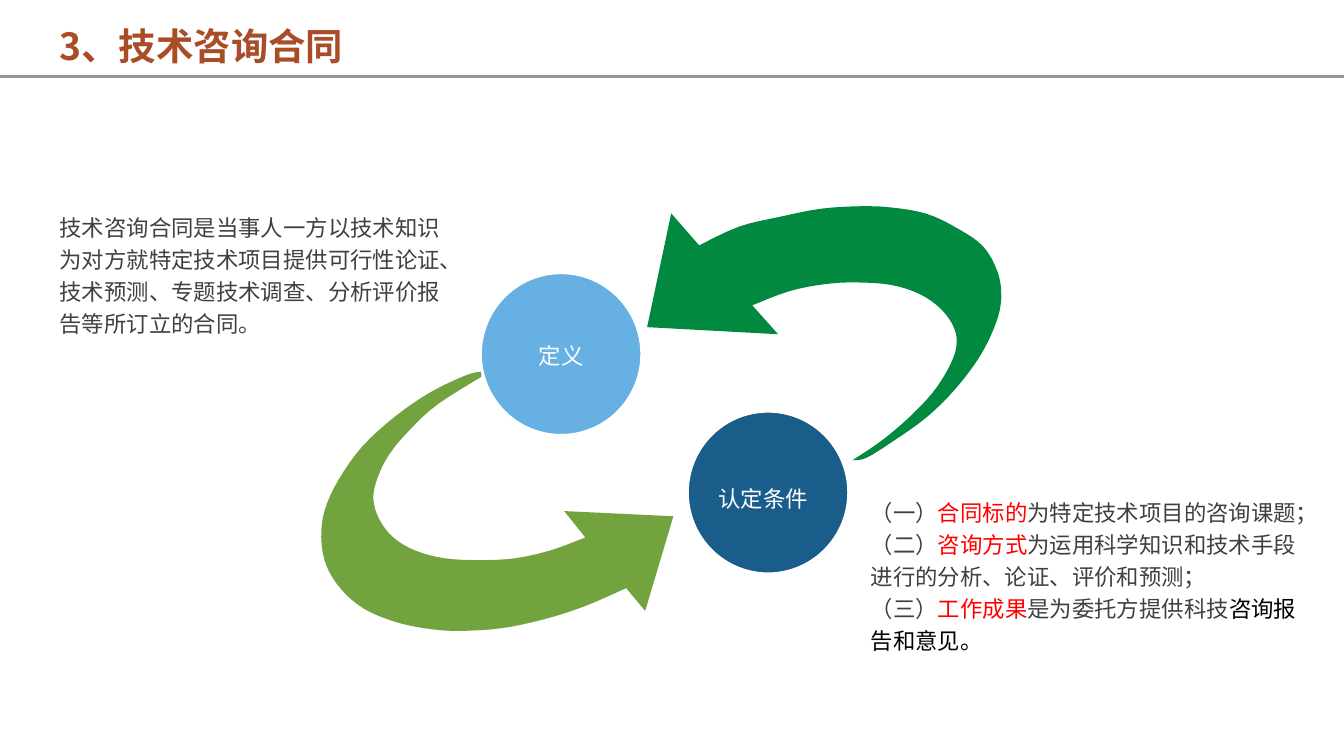
from lxml import etree
from pptx import Presentation, util as u
from pptx.dml.color import RGBColor
from pptx.enum import shapes, text
from pptx.oxml import ns

FONT = "Noto Sans CJK SC"
CELL = u.Inches(0.1)
COLS, ROWS = 100, 56.25
DARK, RED = "404040", "FF0000"

UPPER = dict(
    outer=[(58, 100), (62, 99), (70, 92), (79, 83), (87, 72), (94, 59),
           (98.5, 46), (100, 36), (99, 26), (95, 16), (88, 9), (79, 3),
           (69, 0.5), (60, 0), (49, 1), (38, 4), (26, 8), (14.7, 15.4)],
    head=[(6.8, 2.8), (0, 47.6), (37, 50.4)],
    inner=[(29.7, 39), (40, 33.5), (50, 30.7), (59, 30), (69, 31),
           (77, 34.6), (83, 40.5), (86.7, 48), (87.3, 55.5), (85, 64),
           (80.5, 73.6), (73.7, 83.5), (66, 92.5), (58, 100)])
LOWER = dict(
    outer=[(45.5, 0), (41, 1.5), (31, 8), (21, 17.3), (11.6, 29), (4.8, 42),
           (1, 53.5), (0, 64), (1.4, 74.6), (5.7, 84), (12.2, 91.5),
           (21, 96.5), (29.5, 99), (38.4, 100), (51, 99), (63.6, 95.4),
           (75, 90.4), (86.6, 83.5)],
    head=[(92, 92.3), (100, 55.8), (69, 53.8)],
    inner=[(75, 64), (65, 69), (55, 72), (45, 72.7), (35, 72), (26.7, 69),
           (20.5, 64), (16.5, 57), (14.8, 49), (16, 41), (19.3, 32),
           (25, 22.7), (33, 12.7), (45.5, 2)])

DEFINITION = ("技术咨询合同是当事人一方以技术知识为对方就特定技术项目提供可行性论证、"
              "技术预测、专题技术调查、分析评价报告等所订立的合同。")
CONDITIONS = [
    [("（一）", DARK), ("合同标的", RED), ("为特定技术项目的咨询课题；", DARK)],
    [("（二）", DARK), ("咨询方式", RED),
     ("为运用科学知识和技术手段进行的分析、论证、评价和预测；", DARK)],
    [("（三）", DARK), ("工作成果", RED), ("是为委托方提供科技", DARK),
     ("咨询报告和意见。", "000000")],
]


def rgb(value):
    """Turn a hex string into a colour."""
    return RGBColor.from_string(value)


def cells(*counts):
    """Turn counts of grid cells into lengths."""
    return [round(n * CELL) for n in counts]


def add_text(s, box, content, size=12, color=DARK, bold=False, align=None,
             anchor=text.MSO_ANCHOR.TOP):
    """Write a string, or paragraphs of (words, colour) runs, in a box."""
    paragraphs = [[(content, color)]] if isinstance(content, str) else content
    tf = s.shapes.add_textbox(*cells(*box)).text_frame
    tf.word_wrap = True
    tf.vertical_anchor = anchor
    for i, runs in enumerate(paragraphs):
        p = tf.add_paragraph() if i else tf.paragraphs[0]
        p.alignment, p.line_spacing = align, 1.2
        for words, tint in runs:
            r = p.add_run()
            r.text = words
            r.font.name, r.font.size, r.font.bold = FONT, u.Pt(size), bold
            r.font.color.rgb = rgb(tint)
            ea = etree.SubElement(r.font._element, ns.qn("a:ea"))
            ea.set("typeface", FONT)


def smooth(points, steps=4):
    """Sample a Catmull-Rom curve through the points."""
    padded = [points[0], *points, points[-1]]
    curve = []
    for a, b, c, d in zip(padded, padded[1:], padded[2:], padded[3:]):
        for t in (k / steps for k in range(steps)):
            curve.append(tuple(
                (2 * q + (r - p) * t + (2 * p - 5 * q + 4 * r - v) * t ** 2
                 + (3 * q - p - 3 * r + v) * t ** 3) / 2
                for p, q, r, v in zip(a, b, c, d)))
    return curve + [points[-1]]


def add_arrow(s, box, color, outer, head, inner):
    """Draw a curved arrow from outlines in percent of its box."""
    x, y, w, h = cells(*box)
    points = [(x + w * px / 100, y + h * py / 100)
              for px, py in smooth(outer) + head + smooth(inner)]
    builder = s.shapes.build_freeform(*points[0])
    builder.add_line_segments(points[1:], close=True)
    sp = builder.convert_to_shape()
    sp.shadow.inherit = False
    sp.fill.solid()
    sp.fill.fore_color.rgb = rgb(color)
    sp.line.fill.background()


def add_topic(s, box, color, label, label_box):
    """Draw a circle with its centred label."""
    sp = s.shapes.add_shape(shapes.MSO_SHAPE.OVAL, *cells(*box))
    sp.shadow.inherit = False
    sp.fill.solid()
    sp.fill.fore_color.rgb = rgb(color)
    sp.line.color.rgb = rgb("FFFFFF")
    sp.line.width = u.Pt(1.5)
    add_text(s, label_box, label, color="FFFFFF", align=text.PP_ALIGN.CENTER)


def add_header(s, box, title):
    """Place the title and the rule along the foot of the box."""
    x, y, w, h = box
    add_text(s, (x + 3.45, y + 0.6, 43.7, 5), title, size=20,
             color="A94D28", bold=True)
    rule = s.shapes.add_connector(shapes.MSO_CONNECTOR.STRAIGHT,
                                  *cells(x, y + h, x + w, y + h))
    rule.line.color.rgb = rgb("969696")
    rule.line.width = u.Pt(1.5)
    etree.SubElement(rule._element.spPr, ns.qn("a:effectLst"))


def add_cycle(s, box):
    """Place the two arrows and two topics of the cycle."""
    x, y, w, h = box
    add_arrow(s, (x + w - 26.35, y, 26.35, 18.9), "00893F", **UPPER)
    add_arrow(s, (x, y + h - 19.3, 26.2, 19.3), "72A33E", **LOWER)
    add_topic(s, (x + 27.25, y + 15.25, 12, 12.1), "1A5D8B", "认定条件",
              (x + 25.9, y + 19.85, 14, 3.4))
    add_topic(s, (x + 11.85, y + 4.95, 12, 12.1), "67B0E3", "定义",
              (x + 10.85, y + 9.25, 14, 3.4))


def main():
    """Build the slide and save it."""
    prs = Presentation()
    prs.slide_width, prs.slide_height = cells(COLS, ROWS)
    s = prs.slides.add_slide(prs.slide_layouts[6])
    add_cycle(s, (23.9, 15.35, 50.6, 31.6))
    add_text(s, (63.8, 36.15, 34.1, 13.1), CONDITIONS,
             anchor=text.MSO_ANCHOR.MIDDLE)
    add_text(s, (3.45, 14.95, 31.5, 10.7), DEFINITION,
             anchor=text.MSO_ANCHOR.MIDDLE)
    add_header(s, (0, 0, COLS, 5.7), "3、技术咨询合同")
    prs.save("out.pptx")


if __name__ == "__main__":
    main()
